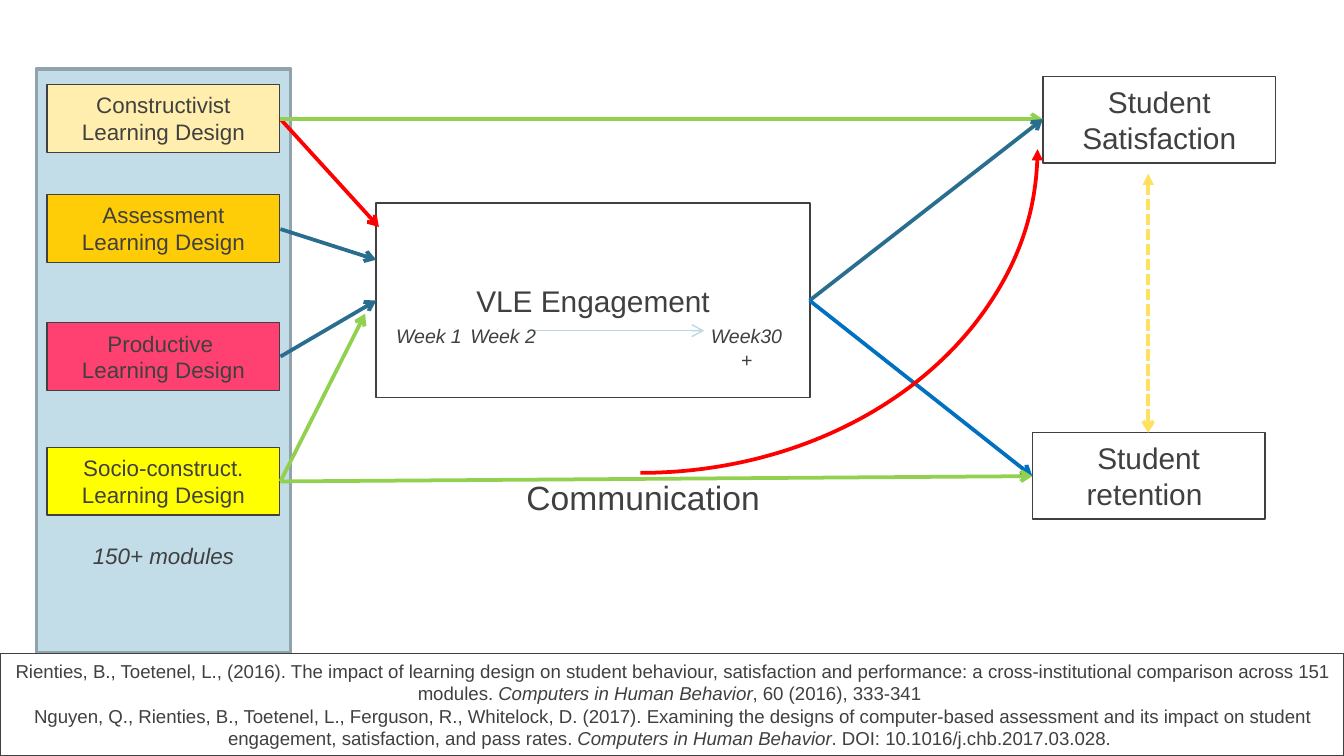
from pptx import Presentation
from pptx.dml.color import RGBColor
from pptx.enum.dml import MSO_LINE as Dash
from pptx.enum.shapes import MSO_CONNECTOR as Conn, MSO_SHAPE as Kind
from pptx.enum.text import MSO_ANCHOR as Anchor, PP_ALIGN as Align
from pptx.oxml.ns import qn
from pptx.util import Cm, Pt
from lxml.etree import SubElement

INK = "404040"
RED = "FF0000"
BLUE = "296E8F"
GREEN = "92D050"


def tint(code):
    return RGBColor.from_string(code)


class Board:
    font = "Arial"

    def __init__(self, deck):
        self.slide = deck.slides.add_slide(deck.slide_layouts[6])
        self.shapes = self.slide.shapes

    def stroke(self, item, color, width):
        item.line.color.rgb = tint(color)
        item.line.width = Pt(width)

    def tip(self, item, head=None, tail="arrow"):
        line = item.line._get_or_add_ln()
        if head:
            SubElement(line, qn("a:headEnd"), type=head)
        SubElement(line, qn("a:tailEnd"), type=tail)

    def letter(self, item, text, size, italic=False, align=Align.CENTER):
        frame = item.text_frame
        frame.word_wrap = True
        for i, row in enumerate(text.split("\n")):
            para = frame.add_paragraph() if i else frame.paragraphs[0]
            para.alignment = align
            para.font.name = self.font
            para.font.size = Pt(size)
            para.font.color.rgb = tint(INK)
            para.font.italic = italic
            for j, part in enumerate(row.split("*")):
                run = para.add_run()
                run.text = part
                if j % 2:
                    run.font.italic = True

    def box(self, area, fill=None, text="", size=12, edge=INK, width=0.75):
        item = self.shapes.add_shape(Kind.RECTANGLE, *map(Cm, area))
        item.shadow.inherit = False
        if fill:
            item.fill.solid()
            item.fill.fore_color.rgb = tint(fill)
        else:
            item.fill.background()
        self.stroke(item, edge, width)
        if text:
            item.text_frame.vertical_anchor = Anchor.MIDDLE
            self.letter(item, text, size)

    def label(self, area, text, size, italic=True, align=Align.CENTER):
        item = self.shapes.add_textbox(*map(Cm, area))
        self.letter(item, text, size, italic, align)

    def arrow(self, start, end, color, width=2, head=None, dash=None):
        item = self.shapes.add_connector(Conn.STRAIGHT, *map(Cm, start + end))
        self.stroke(item, color, width)
        if dash:
            item.line.dash_style = dash
        self.tip(item, head)
        SubElement(item._element.spPr, qn("a:effectLst"))

    def arc(self, area, color):
        item = self.shapes.add_shape(Kind.ARC, *map(Cm, area))
        item.shadow.inherit = False
        item.fill.background()
        self.stroke(item, color, 2)
        self.tip(item, tail="triangle")
        item._element.spPr.xfrm.set("flipV", "1")


def main():
    deck = Presentation()
    deck.slide_width, deck.slide_height = Cm(25.4), Cm(14.29)
    board = Board(deck)

    board.box((0.69, 1.3, 4.8, 11.05), "C2DCE8", edge="90A3AC", width=2)
    designs = [
        (1.6, "FFEEAD", "Constructivist Learning Design"),
        (3.68, "FFCD08", "Assessment Learning Design"),
        (6.1, "FF4171", "Productive \nLearning Design"),
        (8.46, "FFFF00", "Socio-construct. Learning Design"),
    ]
    for top, fill, text in designs:
        board.box((0.89, top, 4.4, 1.28), fill, text)
    board.box((7.11, 3.84, 8.2, 3.68), text="VLE Engagement", size=16)
    board.box((19.71, 1.45, 4.4, 1.63), text="Student Satisfaction", size=16)
    board.box((19.51, 8.18, 4.4, 1.63), text="Student retention ", size=16)

    build, assess, produce, social = [(5.3, y) for y in (2.25, 4.33, 6.74, 9.1)]
    engage, happy, retain = (15.3, 5.68), (19.71, 2.25), (19.51, 9)
    links = [
        (build, (7.16, 4.29), RED),
        (assess, (7.11, 4.91), BLUE),
        (produce, (7.11, 5.68), BLUE),
        (social, (6.9, 5.93), GREEN),
        (build, happy, GREEN),
        (engage, happy, BLUE),
        (engage, retain, "0070C0"),
        (social, retain, GREEN),
    ]
    for start, end, color in links:
        board.arrow(start, end, color)

    board.label((0.89, 10.13, 4.4, 0.76), "150+ modules", 12)
    weeks = [(7.11, "Week 1"), (8.51, "Week 2"), (13.11, "Week30+")]
    for left, text in weeks:
        board.label((left, 6, 2, 0.71), text, 10.5)
    board.arrow((10.11, 6.25), (13.31, 6.25), "BDD7E4", width=0.75)

    board.box(
        (0, 12.35, 25.4, 1.94), "FFFFFF",
        "Rienties, B., Toetenel, L., (2016). The impact of learning design on "
        "student behaviour, satisfaction and performance: a cross-institutional "
        "comparison across 151 modules. *Computers in Human Behavior*, 60 (2016), "
        "333-341 \n"
        "Nguyen, Q., Rienties, B., Toetenel, L., Ferguson, R., Whitelock, D. "
        "(2017). Examining the designs of computer-based assessment and its "
        "impact on student engagement, satisfaction, and pass rates. "
        "*Computers in Human Behavior*. DOI: 10.1016/j.chb.2017.03.028. ",
        size=10)
    board.arrow((21.7, 3.28), (21.7, 8.18), "FFE05F", head="triangle",
                dash=Dash.SQUARE_DOT)
    board.label((9.7, 8.89, 4.98, 1.02), "Communication", 18, False, Align.LEFT)
    board.arc((4.6, -3.3, 15.01, 12.24), RED)

    deck.save("out.pptx")


if __name__ == "__main__":
    main()
